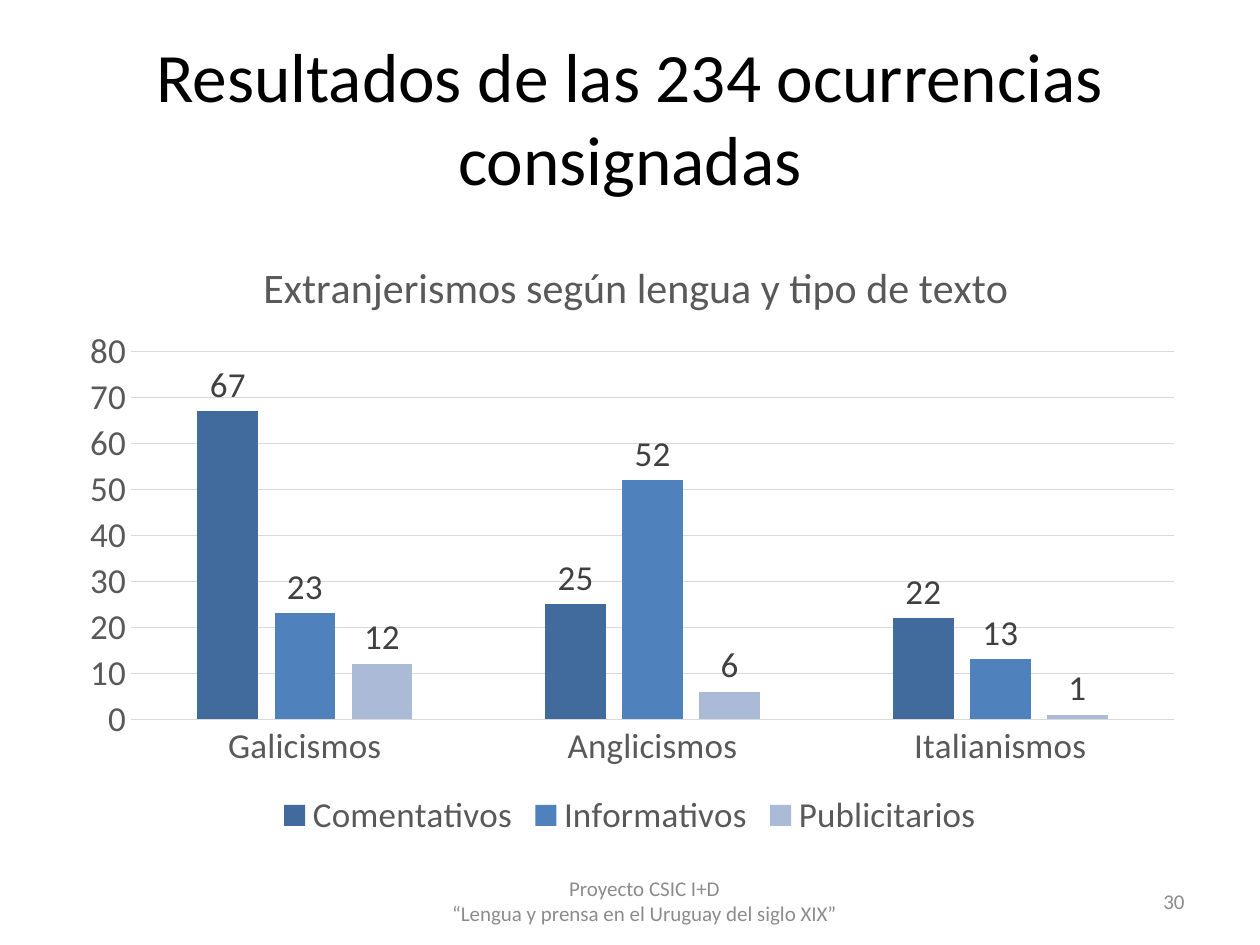
"""Build the slide with a clustered column chart of loanwords by language and text type."""
from lxml import etree
from pptx import Presentation
from pptx.chart.data import CategoryChartData
from pptx.dml.color import RGBColor
from pptx.enum.chart import XL_CHART_TYPE, XL_LABEL_POSITION, XL_LEGEND_POSITION, XL_TICK_MARK
from pptx.enum.text import MSO_ANCHOR, PP_ALIGN
from pptx.oxml.ns import qn
from pptx.util import Inches, Pt

COLUMN = XL_CHART_TYPE.COLUMN_CLUSTERED
OUTSIDE_END = XL_LABEL_POSITION.OUTSIDE_END
BOTTOM = XL_LEGEND_POSITION.BOTTOM
NO_TICK = XL_TICK_MARK.NONE
MIDDLE = MSO_ANCHOR.MIDDLE
CENTER, RIGHT = PP_ALIGN.CENTER, PP_ALIGN.RIGHT

FONT = "Calibri"
BLACK = RGBColor(0x00, 0x00, 0x00)
GRAY = RGBColor(0x59, 0x59, 0x59)
LABEL_GRAY = RGBColor(0x40, 0x40, 0x40)
FOOTER_GRAY = RGBColor(0x8C, 0x8C, 0x8C)
GRID_GRAY = RGBColor(0xD9, 0xD9, 0xD9)

TEXTS = [
    (["Resultados de las 234 ocurrencias consignadas"], (0.5, 0.3, 9, 1.25), 39.6, BLACK, CENTER),
    (["30"], (7.17, 6.95, 2.33, 0.4), 12, FOOTER_GRAY, RIGHT),
    (["Proyecto CSIC I+D", "“Lengua y prensa en el Uruguay del siglo XIX”"],
     (3.42, 6.95, 3.39, 0.4), 12, FOOTER_GRAY, CENTER),
]
CHART_TITLE = "Extranjerismos según lengua y tipo de texto"
CHART_BOX = (0.5, 1.75, 9, 4.95)
CATEGORIES = ["Galicismos", "Anglicismos", "Italianismos"]
SERIES = [
    ("Comentativos", (67, 25, 22), RGBColor(0x42, 0x6B, 0x9D)),
    ("Informativos", (23, 52, 13), RGBColor(0x4F, 0x81, 0xBD)),
    ("Publicitarios", (12, 6, 1), RGBColor(0xAA, 0xBA, 0xD7)),
]
TITLE_LAYOUT = {"xMode": "edge", "yMode": "edge", "x": 0.17, "y": 0.05}
PLOT_LAYOUT = {"layoutTarget": "inner", "xMode": "edge", "yMode": "edge",
               "x": 0.06, "y": 0.21, "w": 0.92, "h": 0.59}


def style_font(font, size, color):
    font.name = FONT
    font.size = Pt(size)
    font.bold = False
    font.color.rgb = color


def style_line(line):
    line.color.rgb = GRID_GRAY
    line.width = Pt(0.75)


def add_text(slide, lines, box, size, color, alignment):
    frame = slide.shapes.add_textbox(*map(Inches, box)).text_frame
    frame.word_wrap = True
    frame.vertical_anchor = MIDDLE
    frame.text = "\n".join(lines)
    for paragraph in frame.paragraphs:
        paragraph.alignment = alignment
        style_font(paragraph.font, size, color)


def set_layout(element, position, values):
    for old_layout in element.findall(qn("c:layout")):
        element.remove(old_layout)
    layout = etree.Element(qn("c:layout"))
    manual = etree.SubElement(layout, qn("c:manualLayout"))
    for name, value in values.items():
        etree.SubElement(manual, qn(f"c:{name}")).set("val", str(value))
    element.insert(position, layout)


def add_column_chart(slide):
    data = CategoryChartData()
    data.categories = CATEGORIES
    for name, values, _ in SERIES:
        data.add_series(name, values)
    chart = slide.shapes.add_chart(COLUMN, *map(Inches, CHART_BOX), data).chart
    style_font(chart.font, 20, GRAY)

    chart.has_title = True
    title = chart.chart_title
    title.text_frame.text = CHART_TITLE
    style_font(title.text_frame.paragraphs[0].font, 24, GRAY)
    set_layout(title._element, 1, TITLE_LAYOUT)
    set_layout(chart._chartSpace.chart.plotArea, 0, PLOT_LAYOUT)

    chart.has_legend = True
    chart.legend.position = BOTTOM
    chart.legend.include_in_layout = False
    style_font(chart.legend.font, 20, GRAY)

    for axis in (chart.category_axis, chart.value_axis):
        axis.major_tick_mark = axis.minor_tick_mark = NO_TICK
        style_font(axis.tick_labels.font, 20, GRAY)
    style_line(chart.category_axis.format.line)
    value_axis = chart.value_axis
    value_axis.format.line.fill.background()
    value_axis.minimum_scale, value_axis.maximum_scale, value_axis.major_unit = 0, 80, 10
    style_line(value_axis.major_gridlines.format.line)

    plot = chart.plots[0]
    plot.gap_width, plot.overlap = 219, -27
    plot.vary_by_categories = False
    for series, (_, _, color) in zip(plot.series, SERIES):
        series.format.fill.solid()
        series.format.fill.fore_color.rgb = color
        labels = series.data_labels
        labels.show_value = True
        labels.position = OUTSIDE_END
        style_font(labels.font, 20, LABEL_GRAY)


def main():
    presentation = Presentation()
    presentation.slide_width, presentation.slide_height = Inches(10), Inches(7.5)
    slide = presentation.slides.add_slide(presentation.slide_layouts[6])
    add_column_chart(slide)
    for text in TEXTS:
        add_text(slide, *text)
    presentation.save("out.pptx")


if __name__ == "__main__":
    main()
